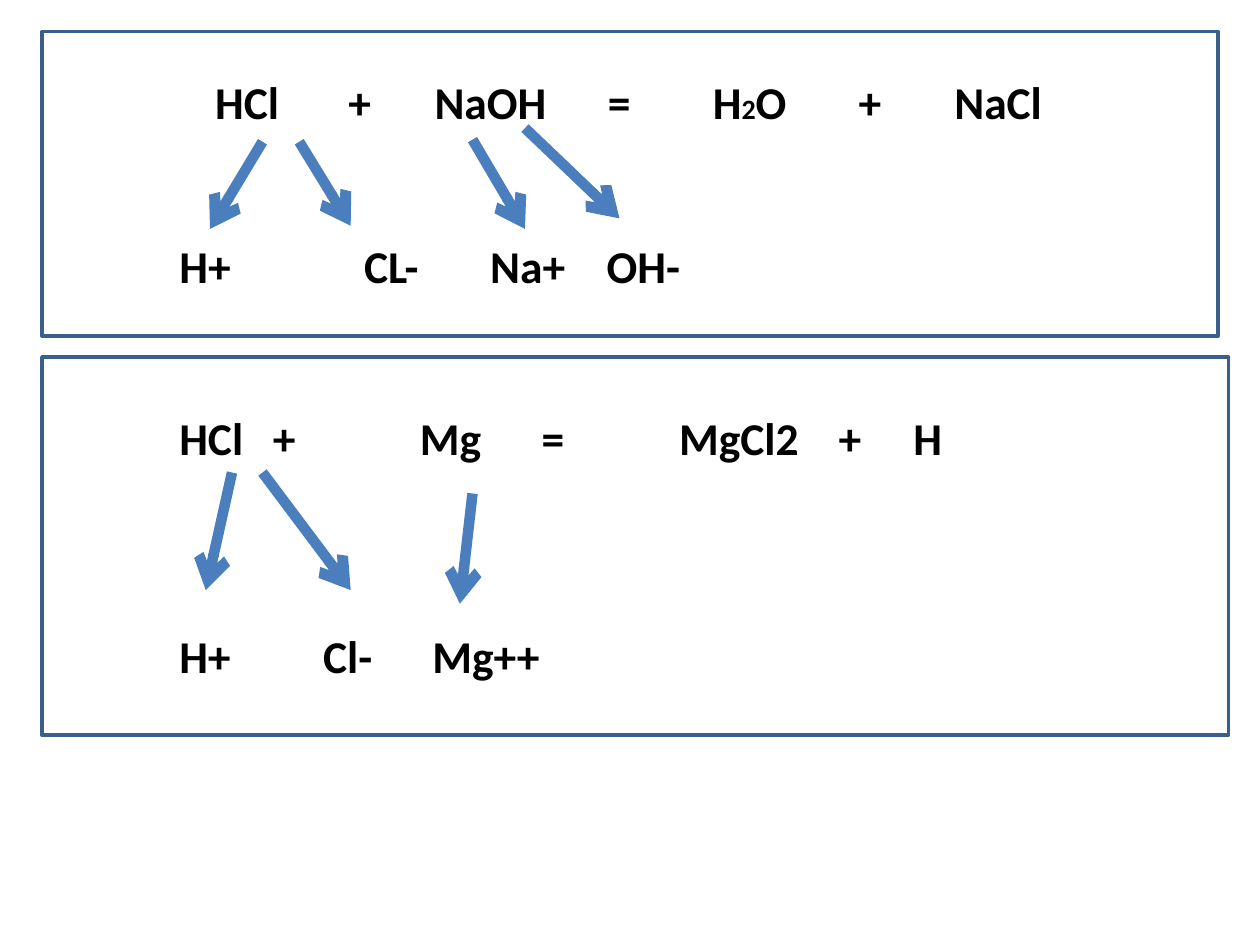
from typing import NamedTuple

from lxml import etree
from pptx import Presentation, util as u
from pptx.dml.color import RGBColor
from pptx.enum import shapes, text
from pptx.oxml.ns import qn

CELL = u.Inches(1) // 12  # the slide is a grid of 120 columns by 90 rows
INSET = u.Inches(0.1)
FONT, SIZE, SMALL = "Calibri", 26, 16
INK, FRAME, ARROW = "000000", "3A5F8C", "4B7EBC"


class Term(NamedTuple):
    col: float
    label: str  # digits between ~ marks are set small


class Arrow(NamedTuple):
    col1: float
    row1: float
    col2: float
    row2: float


class Reaction(NamedTuple):
    col: float
    row: float
    cols: float
    rows: float
    ion_gap: float  # points between equation and ions
    equation: list[Term]
    ions: list[Term]
    arrows: list[Arrow]


REACTIONS = [
    Reaction(
        4, 3, 112, 29, 62.5,
        [Term(20.5, "HCl"), Term(33.2, "+"), Term(41.4, "NaOH"), Term(57.9, "="),
         Term(67.9, "H~2~O"), Term(81.8, "+"), Term(90.9, "NaCl")],
        [Term(17.1, "H+"), Term(34.7, "CL-"), Term(46.7, "Na+"), Term(57.8, "OH-")],
        [Arrow(28.5, 13.5, 33.4, 21.5), Arrow(25, 13.5, 20, 21.8),
         Arrow(45, 13.3, 50, 21.8), Arrow(50, 12.2, 59, 20.8)],
    ),
    Reaction(
        4, 34, 113, 36, 93.5,
        [Term(17.1, "HCl"), Term(26, "+"), Term(40, "Mg"), Term(51.6, "="),
         Term(64.7, "MgCl2"), Term(79.9, "+"), Term(87, "H")],
        [Term(17.1, "H+"), Term(30.8, "Cl-"), Term(41.2, "Mg++")],
        [Arrow(22.1, 45, 19.6, 56.2), Arrow(25, 45, 33.4, 56.2),
         Arrow(45, 47, 43.8, 57.5)],
    ),
]


def cells(n: float) -> int:
    return round(n * CELL)


def rgb(color: str) -> RGBColor:
    return RGBColor.from_string(color)


def write_terms(p, terms: list[Term], left: int) -> None:
    """Set each term at its own tab stop, measured from the text's left edge."""
    p.alignment = text.PP_ALIGN.LEFT
    tabs = etree.SubElement(p._p.get_or_add_pPr(), qn("a:tabLst"))
    for term in terms:
        etree.SubElement(tabs, qn("a:tab"), pos=str(cells(term.col) - left), algn="l")
    line = "".join("\t" + term.label for term in terms)
    for i, part in enumerate(line.split("~")):
        r = p.add_run()
        r.text = part
        r.font.name, r.font.bold = FONT, True
        r.font.size = u.Pt(SMALL if i % 2 else SIZE)
        r.font.color.rgb = rgb(INK)


def draw_frame(s, reaction: Reaction) -> None:
    sp = s.shapes.add_shape(shapes.MSO_SHAPE.RECTANGLE, *map(cells, reaction[:4]))
    sp.shadow.inherit = False
    sp.fill.background()
    sp.line.color.rgb = rgb(FRAME)
    sp.line.width = u.Pt(2)
    tf = sp.text_frame
    tf.word_wrap = True
    tf.margin_left = tf.margin_right = INSET
    tf.vertical_anchor = text.MSO_ANCHOR.MIDDLE
    left = cells(reaction.col) + INSET
    write_terms(tf.paragraphs[0], reaction.equation, left)
    p = tf.add_paragraph()
    p.space_before = u.Pt(reaction.ion_gap)
    write_terms(p, reaction.ions, left)


def draw_arrow(s, arrow: Arrow) -> None:
    sp = s.shapes.add_connector(shapes.MSO_CONNECTOR.STRAIGHT, *map(cells, arrow))
    sp.line.color.rgb = rgb(ARROW)
    sp.line.width = u.Pt(6)
    etree.SubElement(sp.line._get_or_add_ln(), qn("a:tailEnd"), type="arrow")
    etree.SubElement(sp._element.spPr, qn("a:effectLst"))


def main() -> None:
    prs = Presentation()
    prs.slide_width, prs.slide_height = cells(120), cells(90)
    s = prs.slides.add_slide(prs.slide_layouts[6])
    for reaction in REACTIONS:
        draw_frame(s, reaction)
    for reaction in REACTIONS:
        for arrow in reaction.arrows:
            draw_arrow(s, arrow)
    prs.save("out.pptx")


if __name__ == "__main__":
    main()
